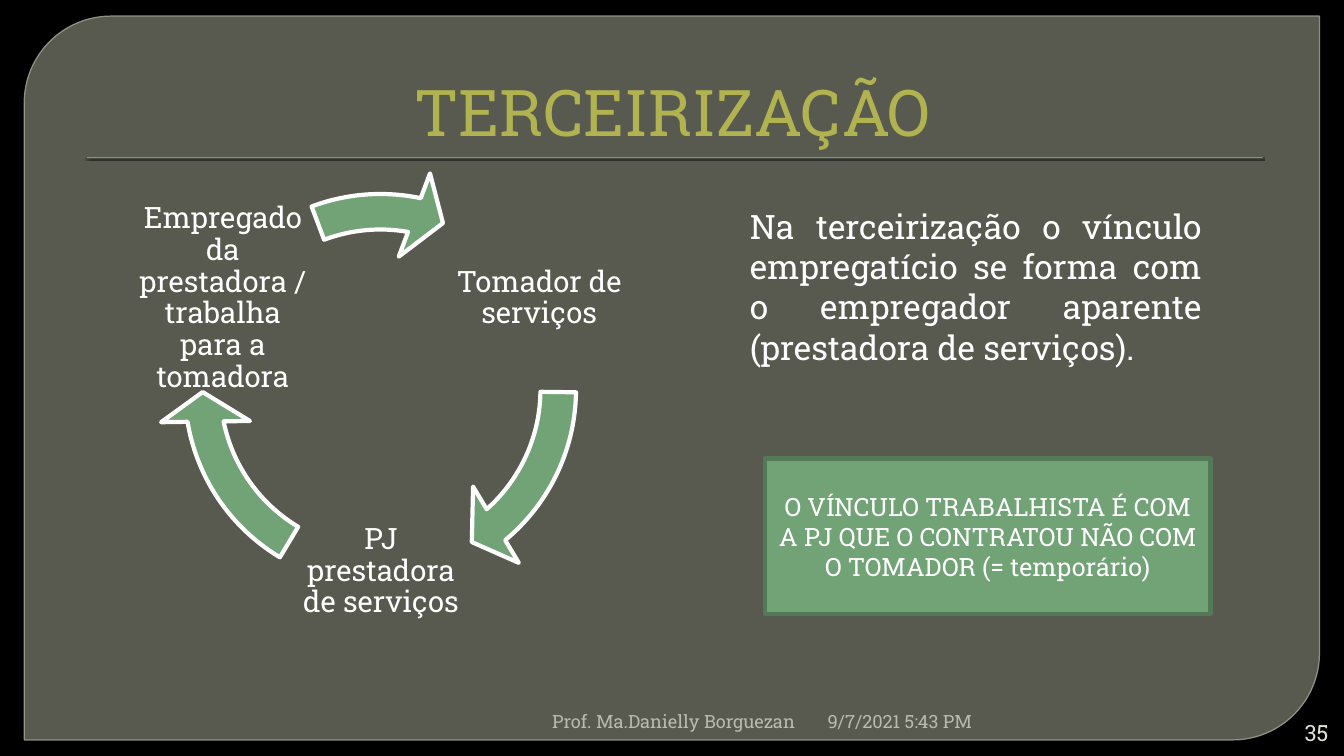
from pptx import Presentation
from pptx.dml.color import RGBColor
from pptx.enum import shapes as sh, text as tx
from pptx.oxml import parse_xml
from pptx.oxml.ns import nsdecls, qn
from pptx.util import Pt

FONT = "Roboto Slab"
WHITE, GREEN, GREY = "FFFFFF", "72A376", "B9BBB2"
LEFT, MID, RIGHT, FULL = (
    tx.PP_ALIGN.LEFT, tx.PP_ALIGN.CENTER, tx.PP_ALIGN.RIGHT, tx.PP_ALIGN.JUSTIFY)
TOP, CORE, BASE = tx.MSO_ANCHOR.TOP, tx.MSO_ANCHOR.MIDDLE, tx.MSO_ANCHOR.BOTTOM


def paint(fill, code, alpha=100):
    """Make a fill solid in a hex colour, with opacity in percent."""
    fill.solid()
    fill.fore_color.rgb = RGBColor.from_string(code)
    if alpha < 100:
        node = fill.fore_color._xFill[0]
        node.append(parse_xml(f'<a:alpha {nsdecls("a")} val="{alpha * 1000}"/>'))


class Deck:
    def __init__(self):
        self.prs = Presentation()
        self.prs.slide_width, self.prs.slide_height = Pt(960), Pt(540)
        self.slide = self.prs.slides.add_slide(self.prs.slide_layouts[5])
        paint(self.slide.background.fill, "000000")

    def fill_text(self, shape, words, size, code=WHITE, align=LEFT, anchor=TOP, pad=None):
        frame = shape.text_frame
        frame.word_wrap = True
        frame.auto_size = tx.MSO_AUTO_SIZE.NONE
        frame.vertical_anchor = anchor
        if pad is not None:
            frame.margin_left = frame.margin_right = Pt(pad)
            frame.margin_top = frame.margin_bottom = Pt(pad)
        para = frame.paragraphs[0]
        para.alignment = align
        run = para.add_run()
        run.text = words
        run.font.size, run.font.name = Pt(size), FONT
        paint(run.font.fill, code)
        return para

    def title(self, box, words, size, code):
        shape = self.slide.shapes.title
        shape.left, shape.top, shape.width, shape.height = map(Pt, box)
        para = self.fill_text(shape, words, size, code, MID, BASE)
        props = para._p.get_or_add_pPr()
        props.set("marL", str(Pt(4)))
        props.set("indent", str(-Pt(4)))

    def label(self, box, words, size, **style):
        frame = self.slide.shapes.add_textbox(*map(Pt, box))
        return self.fill_text(frame, words, size, **style)

    def shape(self, kind, box, fill, line=None, width=3, adjust=(), alpha=(100, 100)):
        item = self.slide.shapes.add_shape(kind, *map(Pt, box))
        item.shadow.inherit = False
        for i, value in enumerate(adjust):
            item.adjustments[i] = value
        paint(item.fill, fill, alpha[0])
        if line:
            item.line.width = Pt(width)
            paint(item.line.fill, line, alpha[1])
        else:
            item.line.fill.background()
        return item

    def rule(self, box, code):
        """Thin bar with a soft shadow just below it."""
        bar = self.shape(sh.MSO_SHAPE.RECTANGLE, box, code)
        bar._element.spPr.find(qn("a:effectLst")).append(parse_xml(
            f'<a:outerShdw {nsdecls("a")} blurRad="{Pt(1)}" dist="{Pt(1)}" dir="5400000" '
            'rotWithShape="0"><a:srgbClr val="000000"><a:alpha val="75000"/>'
            '</a:srgbClr></a:outerShdw>'))

    def cycle(self, steps, arcs):
        """Labels around a ring, each followed by its curved arrow."""
        side = 134
        for (left, top, words), (end, start) in zip(steps, arcs):
            para = self.label((left, top, side, side), words, 21,
                              align=MID, anchor=CORE, pad=2)
            para.line_spacing = 0.9
            self.shape(sh.MSO_SHAPE.CIRCULAR_ARROW, (113, 119.5, 317.5, 317.5),
                       GREEN, WHITE, adjust=(0.08, 5.75, end, start, 0.1))


def main():
    deck = Deck()
    deck.shape(sh.MSO_SHAPE.ROUND_2_DIAG_RECTANGLE, (17.3, 11.5, 925.2, 517),
               "888B7B", "9DA090", 0.87, (0.12, 0), (65, 88))
    deck.rule((62, 112.3, 840, 0.72), GREEN)
    deck.title((48, 20, 864, 90), "TERCEIRIZAÇÃO", 46, "FFFF00")

    deck.cycle(
        [(318.2, 146.2, "Tomador de serviços"),
         (205.2, 341.3, "PJ prestadora de serviços"),
         (92.2, 146.2, "Empregado da prestadora / trabalha para a tomadora")],
        [(29.69, 0.48), (101.77, 72.56), (168.61, 149.64)])

    deck.label((584, 504, 315.4, 21.6), "9/7/2021 5:43 PM", 13, code=GREY)
    deck.label((136, 504, 442, 21.6), "Prof. Ma.Danielly Borguezan ", 13,
               code=GREY, align=RIGHT)
    deck.label((907, 512.6, 49, 21.6), "35", 16, code="E0E0D4",
               align=RIGHT, anchor=CORE)

    deck.label((528.5, 143.3, 337, 123.8),
               "Na terceirização o vínculo empregatício se forma com o empregador "
               "aparente (prestadora de serviços).", 24, align=FULL)
    note = deck.shape(sh.MSO_SHAPE.RECTANGLE, (546.5, 327.6, 318.2, 110.9),
                      GREEN, "547957")
    deck.fill_text(note, "O VÍNCULO TRABALHISTA É COM A PJ QUE O CONTRATOU NÃO COM "
                   "O TOMADOR (= temporário)", 18, align=MID, anchor=CORE)
    deck.prs.save("out.pptx")


if __name__ == "__main__":
    main()
